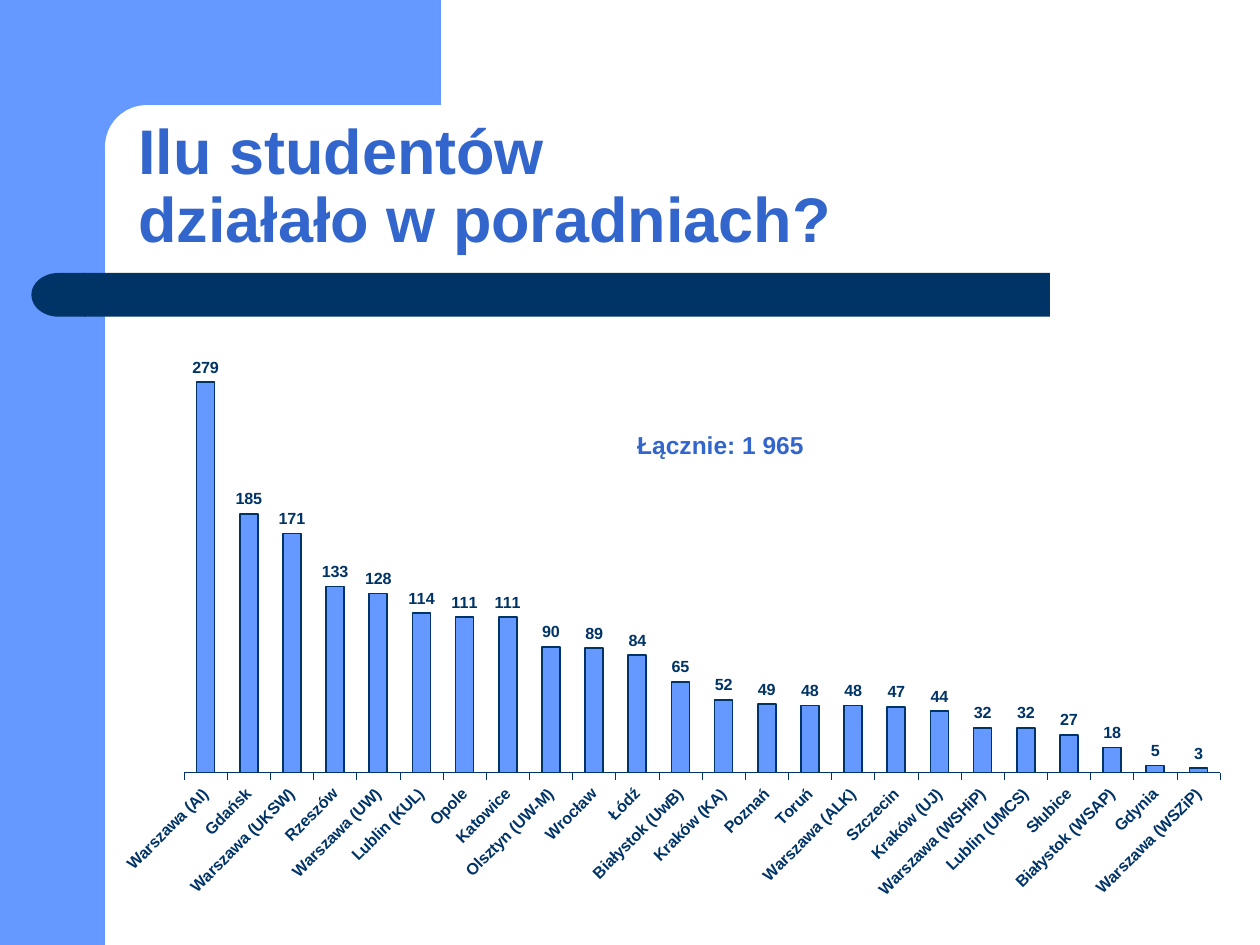
from typing import NamedTuple, Optional

from lxml.etree import SubElement
from pptx import Presentation
from pptx.chart.data import CategoryChartData
from pptx.dml.color import RGBColor
from pptx.enum.chart import XL_CHART_TYPE, XL_LABEL_POSITION, XL_TICK_LABEL_POSITION, XL_TICK_MARK
from pptx.enum.shapes import MSO_SHAPE
from pptx.enum.text import MSO_ANCHOR, PP_ALIGN
from pptx.oxml.ns import qn
from pptx.util import Pt

FONT = "Arial"
SKY = RGBColor(0x66, 0x99, 0xFF)
NAVY = RGBColor(0x00, 0x33, 0x66)
BLUE = RGBColor(0x33, 0x66, 0xCC)
WHITE = RGBColor(0xFF, 0xFF, 0xFF)


class Box(NamedTuple):
    left: float
    top: float
    width: float
    height: float

    def lengths(self) -> list:
        return [Pt(v) for v in self]


class Panel(NamedTuple):
    kind: MSO_SHAPE
    box: Box
    color: RGBColor
    rounding: Optional[float] = None
    flipped: bool = False


class Label(NamedTuple):
    box: Box
    lines: list
    size: float
    align: PP_ALIGN
    anchor: MSO_ANCHOR
    spacing: float = 1.0


PANELS = [
    Panel(MSO_SHAPE.RECTANGLE, Box(0, 0, 60, 540), SKY),
    Panel(MSO_SHAPE.RECTANGLE, Box(54, 0, 198, 84), SKY),
    Panel(MSO_SHAPE.ROUNDED_RECTANGLE, Box(60, 60, 402, 48), WHITE, 0.5),
    Panel(MSO_SHAPE.RECTANGLE, Box(48, 156, 552, 25), NAVY),
    Panel(MSO_SHAPE.FLOWCHART_DELAY, Box(18, 156, 31, 25), NAVY, flipped=True),
]
TITLE = Label(Box(72, 60, 630, 90), ["Ilu studentów", "działało w poradniach?"],
              36, PP_ALIGN.LEFT, MSO_ANCHOR.BOTTOM, 0.9)
TOTAL = Label(Box(263.5, 242, 296.5, 24), ["Łącznie: 1 965"],
              14, PP_ALIGN.CENTER, MSO_ANCHOR.TOP)
CHART_BOX = Box(65.5, 140.4, 639.4, 401)
PLOT = {"x": 0.062, "y": 0.153, "w": 0.926, "h": 0.598}
STUDENTS = {
    "Warszawa (AI)": 279, "Gdańsk": 185, "Warszawa (UKSW)": 171, "Rzeszów": 133,
    "Warszawa (UW)": 128, "Lublin (KUL)": 114, "Opole": 111, "Katowice": 111,
    "Olsztyn (UW-M)": 90, "Wrocław": 89, "Łódź": 84, "Białystok (UwB)": 65,
    "Kraków (KA)": 52, "Poznań": 49, "Toruń": 48, "Warszawa (ALK)": 48,
    "Szczecin": 47, "Kraków (UJ)": 44, "Warszawa (WSHiP)": 32, "Lublin (UMCS)": 32,
    "Słubice": 27, "Białystok (WSAP)": 18, "Gdynia": 5, "Warszawa (WSZiP)": 3,
}


def style_font(font, size: float, color: RGBColor) -> None:
    font.name = FONT
    font.size = Pt(size)
    font.bold = True
    font.color.rgb = color


def add_panel(s, panel: Panel) -> None:
    sp = s.shapes.add_shape(panel.kind, *panel.box.lengths())
    sp.shadow.inherit = False
    sp.fill.solid()
    sp.fill.fore_color.rgb = panel.color
    sp.line.fill.background()
    if panel.rounding is not None:
        sp.adjustments[0] = panel.rounding
    if panel.flipped:
        sp._element.spPr.find(qn("a:xfrm")).set("flipH", "1")


def add_label(s, label: Label) -> None:
    tf = s.shapes.add_textbox(*label.box.lengths()).text_frame
    tf.word_wrap = True
    tf.vertical_anchor = label.anchor
    p = tf.paragraphs[0]
    p.alignment = label.align
    p.line_spacing = label.spacing
    for i, line in enumerate(label.lines):
        if i:
            p.add_line_break()
        r = p.add_run()
        r.text = line
        style_font(r.font, label.size, BLUE)


def set_plot_layout(chart) -> None:
    """Fix the inner plot area as fractions of the chart frame."""
    area = chart._chartSpace.chart.plotArea
    for old in area.findall(qn("c:layout")):
        area.remove(old)
    layout = SubElement(area, qn("c:layout"))
    area.insert(0, layout)
    manual = SubElement(layout, qn("c:manualLayout"))
    settings = {"layoutTarget": "inner", "xMode": "edge", "yMode": "edge", **PLOT}
    for tag, value in settings.items():
        SubElement(manual, qn(f"c:{tag}")).set("val", str(value))


def add_student_chart(s) -> None:
    data = CategoryChartData()
    data.categories = list(STUDENTS)
    data.add_series("Studenci", list(STUDENTS.values()))
    chart = s.shapes.add_chart(
        XL_CHART_TYPE.COLUMN_CLUSTERED, *CHART_BOX.lengths(), data).chart
    chart.has_legend = False
    chart.has_title = False
    style_font(chart.font, 9.2, NAVY)
    set_plot_layout(chart)

    values = chart.value_axis
    values.minimum_scale, values.maximum_scale = 0, 300
    values.has_major_gridlines = False
    values.visible = False

    cats = chart.category_axis
    cats.major_tick_mark = XL_TICK_MARK.OUTSIDE
    cats.tick_label_position = XL_TICK_LABEL_POSITION.LOW
    cats.format.line.color.rgb = NAVY
    cats.format.line.width = Pt(0.29)
    style_font(cats.tick_labels.font, 9.2, NAVY)
    body = cats._element.find(qn("c:txPr")).find(qn("a:bodyPr"))
    body.set("rot", str(-45 * 60000))
    body.set("vert", "horz")

    plot = chart.plots[0]
    plot.gap_width = 140
    plot.vary_by_categories = False
    bars = plot.series[0].format
    bars.fill.solid()
    bars.fill.fore_color.rgb = SKY
    bars.line.color.rgb = NAVY
    bars.line.width = Pt(1)
    plot.has_data_labels = True
    labels = plot.data_labels
    labels.show_value = True
    labels.position = XL_LABEL_POSITION.OUTSIDE_END
    style_font(labels.font, 9.2, NAVY)


def main() -> None:
    prs = Presentation()
    prs.slide_width, prs.slide_height = Pt(720), Pt(540)
    s = prs.slides.add_slide(prs.slide_layouts[6])
    for panel in PANELS:
        add_panel(s, panel)
    add_label(s, TITLE)
    add_student_chart(s)
    add_label(s, TOTAL)
    prs.save("out.pptx")


if __name__ == "__main__":
    main()
